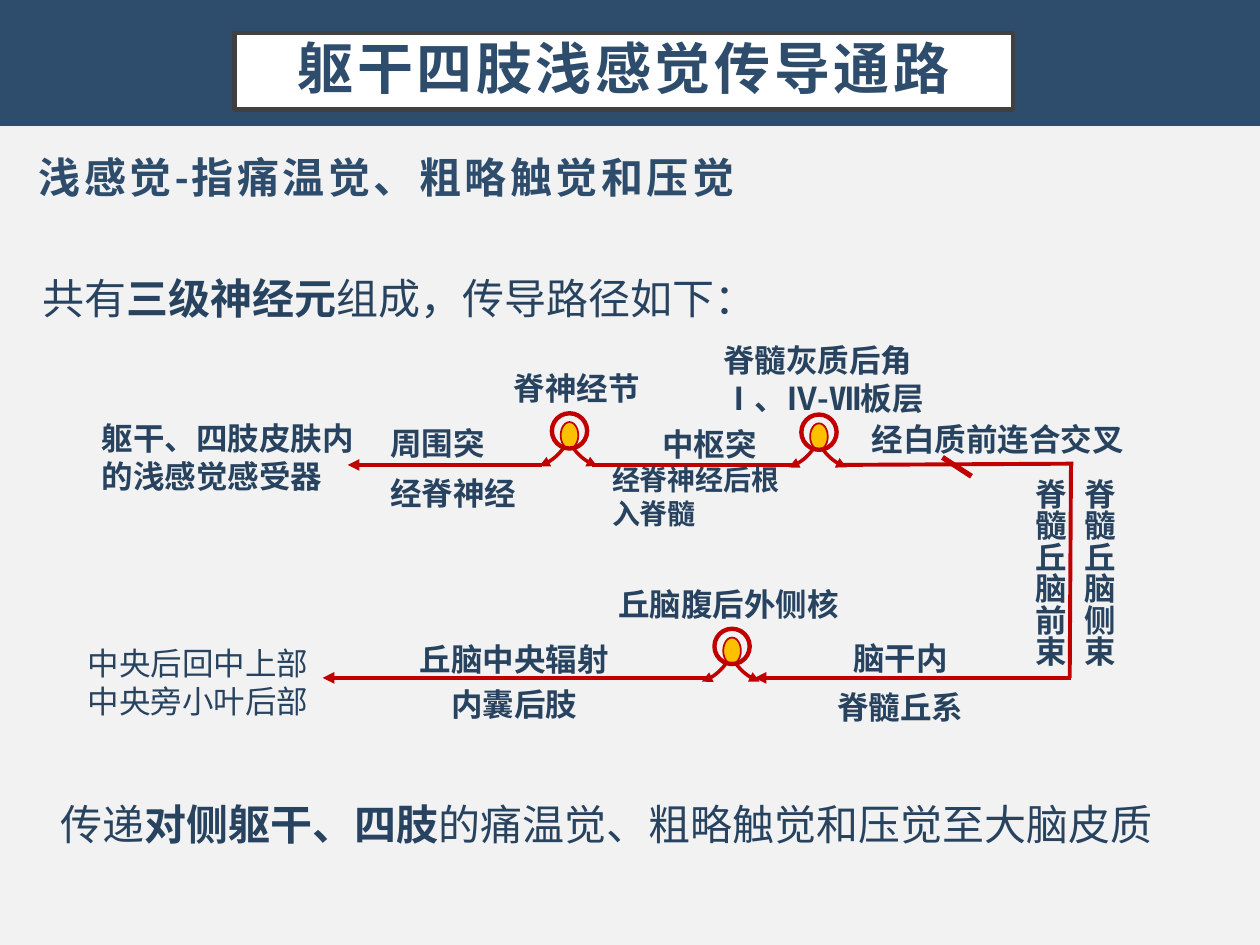
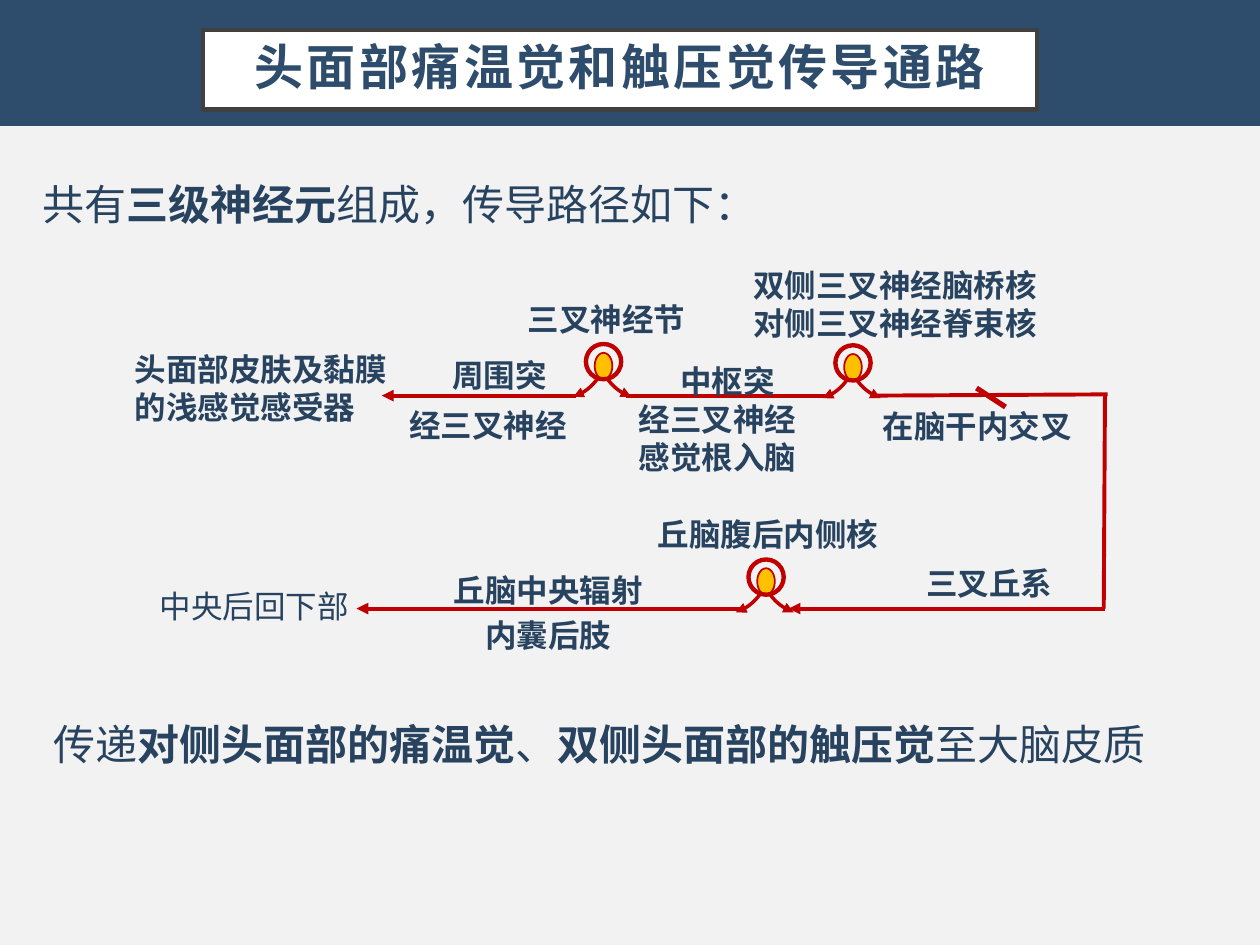
import pptx
import pptx.util
import pptx.dml.color
import pptx.enum.shapes
import pptx.enum.text
import pptx.oxml.ns
from lxml import etree

Inches = pptx.util.Inches
Pt = pptx.util.Pt
qn = pptx.oxml.ns.qn
SHAPE = pptx.enum.shapes.MSO_SHAPE
ALIGN = pptx.enum.text.PP_ALIGN
ANCHOR = pptx.enum.text.MSO_ANCHOR
FIT = pptx.enum.text.MSO_AUTO_SIZE

NAVY, INK, RED, AMBER = "2E4C6B", "28435F", "C00000", "FFC000"
PAPER, WHITE, FRAME = "F2F2F2", "FFFFFF", "404040"
HEAD_FONT, BODY_FONT = "Calibri", "Noto Sans CJK SC"

# Ring positions, and the two nerve fibres as Bezier points from a ring's corner
RINGS = [(4.38, 3.28), (6.36, 3.29), (5.67, 4.99)]
FIBRES = [
    [(0.11, 0.25), (0.06, 0.33), (-0.01, 0.39), (-0.1, 0.42)],
    [(0.16, 0.26), (0.21, 0.34), (0.28, 0.39), (0.36, 0.42)],
]
# Path segments: start, end, width, arrow at the end
SEGMENTS = [
    ((4.3, 3.69), (2.76, 3.69), 2.25, True),
    ((4.7, 3.69), (6.3, 3.69), 2.25, False),
    ((6.67, 3.69), (8.52, 3.68), 2.25, False),
    ((8.5, 3.68), (8.49, 5.38), 2.25, False),
    ((8.5, 5.38), (5.99, 5.38), 2.25, True),
    ((5.61, 5.38), (2.56, 5.38), 2.25, True),
    ((7.71, 3.78), (7.48, 3.63), 3, False),
]


def color(hex_string):
    return pptx.dml.color.RGBColor.from_string(hex_string)


def bezier(points, steps=10):
    """Points along a cubic curve."""
    weights = (1, 3, 3, 1)
    for step in range(steps + 1):
        t = step / steps
        share = [w * t**i * (1 - t) ** (3 - i) for i, w in enumerate(weights)]
        yield tuple(sum(s * p[axis] for s, p in zip(share, points)) for axis in (0, 1))


class Painter:
    """Holds the deck, its style and the current page."""

    def __init__(self):
        self.deck = pptx.Presentation()
        self.deck.slide_width, self.deck.slide_height = Inches(10), Inches(7.5)
        self.layout = self.deck.slide_layouts[5]
        self.page = None
        self.has_band = False
        background = self.deck.slide_master.background.fill
        background.solid()
        background.fore_color.rgb = color(PAPER)

    def new_page(self, title, at, size):
        self.page = self.deck.slides.add_slide(self.layout)
        if not self.has_band:
            # The top band belongs to the layout, behind every title
            band = self.shape(SHAPE.RECTANGLE, (0, 0, 10, 1), fill=NAVY)
            self.layout.shapes.element.insert(2, band.element)
            self.has_band = True
        box = self.page.shapes.title
        box.left, box.top, box.width, box.height = map(Inches, at)
        self.paint(box, WHITE, FRAME, 2.5)
        frame = box.text_frame
        frame.auto_size = FIT.NONE
        frame.word_wrap = True
        frame.vertical_anchor = ANCHOR.MIDDLE
        frame.margin_left = frame.margin_right = Inches(0.2)
        frame.margin_top = frame.margin_bottom = Inches(0.2)
        para = frame.paragraphs[0]
        para.alignment, para.line_spacing = ALIGN.CENTER, 0.9
        self.heading_span(para, title, size)

    # Text
    def span(self, para, text, size, bold, ink=INK, font=BODY_FONT):
        span = para.add_run()
        span.text = text
        span.font.size, span.font.bold = Pt(size), bold
        span.font.color.rgb = color(ink)
        span.font.name = font
        properties = span.font._element
        etree.SubElement(properties, qn("a:ea")).set("typeface", BODY_FONT)
        return properties

    def heading_span(self, para, text, size):
        self.span(para, text, size, True, NAVY, HEAD_FONT).set("spc", "200")

    def text_box(self, at, anchor=ANCHOR.TOP):
        box = self.page.shapes.add_textbox(*map(Inches, at))
        frame = box.text_frame
        frame.word_wrap = True
        frame.auto_size = FIT.SHAPE_TO_FIT_TEXT
        frame.vertical_anchor = anchor
        return box

    def heading(self, at, text):
        box = self.text_box(at)
        self.heading_span(box.text_frame.paragraphs[0], text, 24)

    def statement(self, at, *parts):
        """A sentence whose parts are plain and bold in turn."""
        para = self.text_box(at).text_frame.paragraphs[0]
        para.line_spacing = 1.5
        for index, part in enumerate(parts):
            self.span(para, part, 24, index % 2 == 1)

    def label(self, at, *lines, aligns=(), sizes=(), spacing=1.0, bold=True,
              anchor=ANCHOR.TOP, vertical=False):
        """A diagram label; aligns and sizes are given line by line."""
        box = self.text_box(at, anchor)
        if vertical:
            box.element.txBody.bodyPr.set("vert", "eaVert")
        frame = box.text_frame
        for index, line in enumerate(lines):
            para = frame.add_paragraph() if index else frame.paragraphs[0]
            para.line_spacing = spacing
            para.alignment = aligns[index] if aligns else ALIGN.LEFT
            self.span(para, line, sizes[index] if sizes else 18, bold)

    # Shapes and lines
    def paint(self, shape, fill=None, line=None, width=1):
        shape.shadow.inherit = False
        if fill:
            shape.fill.solid()
            shape.fill.fore_color.rgb = color(fill)
        else:
            shape.fill.background()
        if line:
            self.stroke(shape, line, width)
        else:
            shape.line.fill.background()

    def stroke(self, shape, line, width, arrow=False):
        shape.line.color.rgb = color(line)
        shape.line.width = Pt(width)
        if arrow:
            outline = shape.element.spPr.find(qn("a:ln"))
            etree.SubElement(outline, qn("a:tailEnd")).set("type", "triangle")

    def shape(self, kind, at, fill=None, line=None, width=1):
        shape = self.page.shapes.add_shape(kind, *map(Inches, at))
        self.paint(shape, fill, line, width)
        return shape

    def line(self, start, end, width, arrow):
        line = self.page.shapes.add_connector(
            pptx.enum.shapes.MSO_CONNECTOR.STRAIGHT, *map(Inches, start + end))
        self.stroke(line, RED, width, arrow)
        etree.SubElement(line.element.spPr, qn("a:effectLst"))

    def fibre(self, points):
        curve = [(Inches(x), Inches(y)) for x, y in bezier(points)]
        builder = self.page.shapes.build_freeform(*curve[0], scale=1.0)
        builder.add_line_segments(curve[1:], close=False)
        fibre = builder.convert_to_shape()
        self.paint(fibre)
        self.stroke(fibre, RED, 2, arrow=True)

    def neuron(self, left, top):
        for points in FIBRES:
            self.fibre([(left + x, top + y) for x, y in points])
        self.shape(SHAPE.OVAL, (left + 0.07, top + 0.07, 0.14, 0.21), AMBER, RED, 1)
        self.shape(SHAPE.OVAL, (left, top, 0.28, 0.28), None, RED, 2.5)

    def pathway(self, dx=0.0, dy=0.0):
        """The three-neuron circuit, moved by dx and dy."""
        for left, top in RINGS:
            self.neuron(left + dx, top + dy)
        for start, end, width, arrow in SEGMENTS:
            self.line((start[0] + dx, start[1] + dy), (end[0] + dx, end[1] + dy),
                      width, arrow)
        self.label((2.76 + dx, 4.97 + dy, 2.64, 0.78), "丘脑中央辐射", "内囊后肢",
                   aligns=(ALIGN.CENTER,) * 2, spacing=1.2)


def trunk_page(painter):
    painter.new_page("躯干四肢浅感觉传导通路", (1.86, 0.26, 6.18, 0.61), 32)
    painter.heading((0.21, 1.15, 7.5, 0.5), "浅感觉-指痛温觉、粗略触觉和压觉")
    painter.statement((0.24, 1.91, 9.38, 0.71),
                      "共有", "三级神经元", "组成，传导路径如下：")
    painter.pathway()
    # First neuron
    painter.label((0.71, 3.28, 2.3, 0.71), "躯干、四肢皮肤内的浅感觉感受器")
    painter.label((3, 3.23, 1.63, 0.89), "周围突", "经脊神经", spacing=1.3)
    painter.label((3.98, 2.88, 1.51, 0.4), "脊神经节")
    painter.label((4.76, 3.32, 1.74, 0.94), "中枢突", "经脊神经后根入脊髓",
                  aligns=(ALIGN.CENTER, ALIGN.LEFT), sizes=(18, 16),
                  anchor=ANCHOR.MIDDLE)
    # Second neuron
    painter.label((5.64, 2.66, 2.28, 0.71), "脊髓灰质后角", "Ⅰ、Ⅳ-Ⅶ板层")
    painter.label((6.82, 3.28, 2.27, 0.4), "经白质前连合交叉", anchor=ANCHOR.MIDDLE)
    painter.label((8.02, 3.7, 0.99, 1.79), "脊髓丘脑侧束", "脊髓丘脑前束",
                  spacing=1.3, vertical=True)
    painter.label((6.44, 4.93, 1.41, 0.85), "脑干内", "脊髓丘系",
                  aligns=(ALIGN.CENTER,) * 2, spacing=1.3)
    # Third neuron
    painter.label((4.81, 4.59, 2.31, 0.4), "丘脑腹后外侧核")
    painter.label((0.6, 5.06, 2.24, 0.71), "中央后回中上部", "中央旁小叶后部",
                  bold=False, anchor=ANCHOR.MIDDLE)
    painter.statement((0.38, 6.09, 9.13, 0.71),
                      "传递", "对侧躯干、四肢", "的痛温觉、粗略触觉和压觉至大脑皮质")


def face_page(painter):
    painter.new_page("头面部痛温觉和触压觉传导通路", (1.61, 0.24, 6.62, 0.63), 28)
    painter.statement((0.24, 1.17, 7.06, 0.71),
                      "共有", "三级神经元", "组成，传导路径如下：")
    painter.pathway(0.27, -0.55)
    # First neuron
    painter.label((0.97, 2.73, 2.3, 0.71), "头面部皮肤及黏膜的浅感觉感受器")
    painter.label((3.15, 2.69, 1.63, 0.89), "周围突", "经三叉神经",
                  aligns=(ALIGN.CENTER, ALIGN.LEFT), spacing=1.3)
    painter.label((4.09, 2.33, 1.67, 0.4), "三叉神经节")
    painter.label((4.97, 2.82, 1.61, 1.01), "中枢突", "经三叉神经感觉根入脑",
                  aligns=(ALIGN.CENTER, ALIGN.LEFT), anchor=ANCHOR.MIDDLE)
    # Second neuron
    painter.label((5.88, 2.06, 2.75, 0.71), "双侧三叉神经脑桥核", "对侧三叉神经脊束核")
    painter.label((6.91, 3.18, 1.87, 0.4), "在脑干内交叉", anchor=ANCHOR.MIDDLE)
    painter.label((7.1, 4.34, 1.5, 0.49), "三叉丘系",
                  aligns=(ALIGN.CENTER,), spacing=1.3)
    # Third neuron
    painter.label((5.12, 4.04, 2.15, 0.4), "丘脑腹后内侧核")
    painter.label((1.17, 4.61, 2.24, 0.4), "中央后回下部",
                  bold=False, anchor=ANCHOR.MIDDLE)
    painter.statement((0.33, 5.45, 9.25, 0.71), "传递", "对侧头面部的痛温觉", "、",
                      "双侧头面部的触压觉", "至大脑皮质")


def main():
    painter = Painter()
    trunk_page(painter)
    face_page(painter)
    painter.deck.save("out.pptx")


if __name__ == "__main__":
    main()
